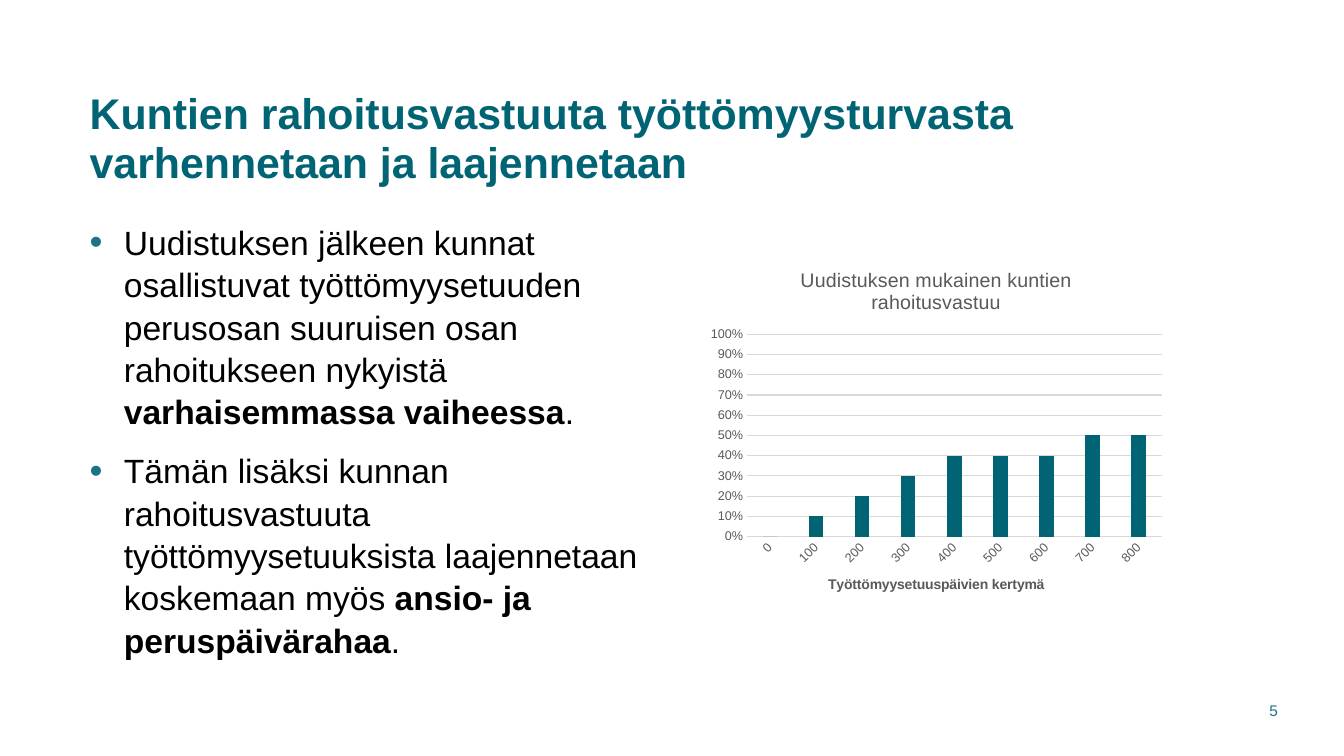
from lxml.etree import SubElement
from pptx import Presentation
from pptx.chart.data import CategoryChartData
from pptx.dml.color import RGBColor
from pptx.enum.chart import XL_CHART_TYPE as ChartType, XL_TICK_MARK as TickMark
from pptx.enum.text import MSO_ANCHOR as Anchor, MSO_AUTO_SIZE as AutoSize, PP_ALIGN as Align
from pptx.oxml.ns import qn
from pptx.util import Pt

TEAL, BULLET_TEAL, BLACK, GREY, RULE = "006475", "1A7483", "000000", "595959", "D9D9D9"

TITLE = "Kuntien rahoitusvastuuta työttömyysturvasta varhennetaan ja laajennetaan"
# Each bullet: plain lead, bold phrase, plain ending
BULLETS = [
    ("Uudistuksen jälkeen kunnat osallistuvat työttömyysetuuden perusosan suuruisen "
     "osan rahoitukseen nykyistä ", "varhaisemmassa vaiheessa", "."),
    ("Tämän lisäksi kunnan rahoitusvastuuta työttömyysetuuksista laajennetaan "
     "koskemaan myös ", "ansio- ja peruspäivärahaa", "."),
]
CHART_TITLE = "Uudistuksen mukainen kuntien rahoitusvastuu"
AXIS_TITLE = "Työttömyysetuuspäivien kertymä"
DAYS = [str(day) for day in range(0, 900, 100)]
SHARES = [0, 0.1, 0.2, 0.3, 0.4, 0.4, 0.4, 0.5, 0.5]


def colour(code):
    return RGBColor.from_string(code)


class SlideBuilder:
    def __init__(self, page, font_name="Arial"):
        self.page = page
        self.font_name = font_name

    def style(self, font, size, code, bold=False):
        font.name, font.size, font.bold = self.font_name, Pt(size), bold
        font.color.rgb = colour(code)

    def place(self, shape, left, top, width, height):
        shape.left, shape.top = Pt(left), Pt(top)
        shape.width, shape.height = Pt(width), Pt(height)

    def frame(self, shape, anchor, side=0):
        frame = shape.text_frame
        frame.word_wrap, frame.auto_size = True, AutoSize.NONE
        frame.vertical_anchor = anchor
        frame.margin_left = frame.margin_right = Pt(side)
        frame.margin_top = frame.margin_bottom = Pt(3.6)
        return frame

    def title(self, text, *area):
        shape = self.page.shapes.title
        self.place(shape, *area)
        para = self.frame(shape, Anchor.MIDDLE).paragraphs[0]
        para.text, para.alignment, para.line_spacing = text, Align.LEFT, 0.95
        self.style(para.font, 30.6, TEAL, bold=True)

    def bullets(self, items, *area):
        shape = self.page.placeholders[1]
        self.place(shape, *area)
        frame = self.frame(shape, Anchor.TOP)
        for index, parts in enumerate(items):
            para = frame.add_paragraph() if index else frame.paragraphs[0]
            self.bullet_mark(para)
            para.space_before = Pt(12 if index else 0)
            para.line_spacing = 1.05
            self.style(para.font, 24, BLACK)
            for position, text in enumerate(parts):
                span = para.add_run()
                span.text = text
                self.style(span.font, 24, BLACK, bold=position == 1)

    def bullet_mark(self, para, indent=24.5):
        props = para._p.get_or_add_pPr()
        props.set("marL", str(Pt(indent)))
        props.set("indent", str(Pt(-indent)))
        SubElement(SubElement(props, qn("a:buClr")), qn("a:srgbClr"), val=BULLET_TEAL)
        SubElement(props, qn("a:buSzPct"), val="110000")
        SubElement(props, qn("a:buFont"), typeface=self.font_name)
        SubElement(props, qn("a:buChar"), char="•")

    def page_number(self, number, *area):
        box = self.page.shapes.add_textbox(*map(Pt, area))
        para = self.frame(box, Anchor.MIDDLE, side=7.2).paragraphs[0]
        para.text, para.alignment = str(number), Align.RIGHT
        self.style(para.font, 11, BULLET_TEAL)

    def heading(self, owner, text, size, bold=False):
        """Give a chart or an axis its title."""
        para = owner.text_frame.paragraphs[0]
        para.text = text
        self.style(para.font, size, GREY, bold)

    def column_chart(self, *area):
        data = CategoryChartData(number_format="0%")
        data.categories = DAYS
        data.add_series("Series 1", SHARES)
        chart = self.page.shapes.add_chart(
            ChartType.COLUMN_CLUSTERED, *map(Pt, area), data).chart
        self.style(chart.font, 10, BLACK)
        chart.has_legend = False
        self.heading(chart.chart_title, CHART_TITLE, 14)
        plot = chart.plots[0]
        plot.gap_width, plot.overlap, plot.vary_by_categories = 219, -27, False
        fill = plot.series[0].format.fill
        fill.solid()
        fill.fore_color.rgb = colour(TEAL)

        days, shares = chart.category_axis, chart.value_axis
        for axis in (days, shares):
            axis.major_tick_mark = axis.minor_tick_mark = TickMark.NONE
            self.style(axis.tick_labels.font, 9, GREY)
        self.heading(days.axis_title, AXIS_TITLE, 10, bold=True)
        days._element.find(qn("c:txPr")).find(qn("a:bodyPr")).set("rot", "-2700000")
        shares.minimum_scale, shares.maximum_scale, shares.major_unit = 0, 1, 0.1
        shares.tick_labels.number_format = "0%"
        shares.tick_labels.number_format_is_linked = False
        shares.format.line.fill.background()
        for line in (days.format.line, shares.major_gridlines.format.line):
            line.color.rgb, line.width = colour(RULE), Pt(0.75)


def main():
    deck = Presentation()
    deck.slide_width, deck.slide_height = Pt(960), Pt(540)
    builder = SlideBuilder(deck.slides.add_slide(deck.slide_layouts[1]))
    builder.title(TITLE, 64, 57, 686, 85)
    builder.bullets(BULLETS, 64, 153.5, 428.5, 332)
    builder.page_number(5, 833, 493, 87, 29)
    builder.column_chart(501, 179.5, 335.5, 259)
    deck.save("out.pptx")


if __name__ == "__main__":
    main()
